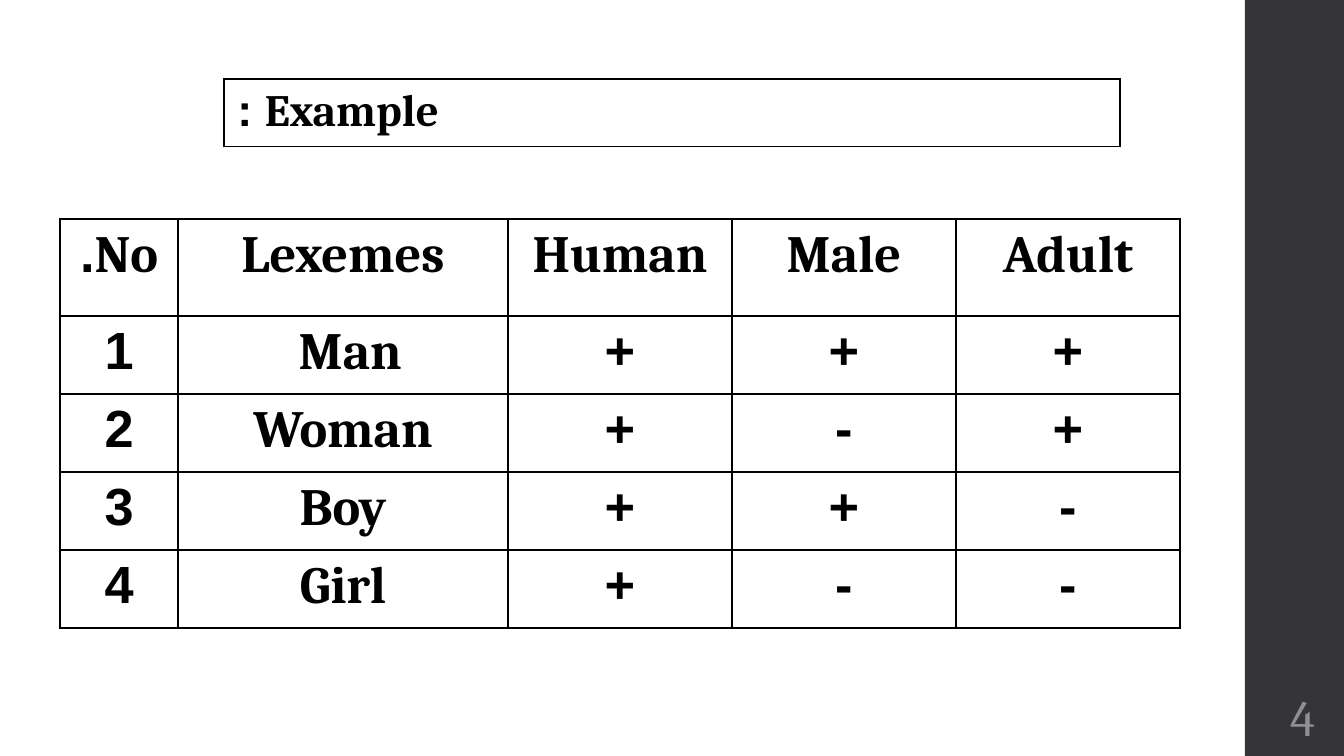
"""Builds a slide with a table of lexemes and their semantic features."""
from lxml import etree
from pptx import Presentation
from pptx import util as u
from pptx.dml.color import RGBColor
from pptx.enum import shapes, text
from pptx.oxml import ns

EMU_PER_PX = 914400 / 134.4
FONT = "Cambria"
BLACK = "000000"
FEATURES = [
    ["No.", "Lexemes", "Human", "Male", "Adult"],
    ["1", "Man ", "+", "+", "+"],
    ["2", "Woman", "+", "-", "+"],
    ["3", "Boy", "+", "+", "-"],
    ["4", "Girl", "+", "-", "-"],
]


def px(length):
    """Turn a length in px into EMU."""
    return u.Emu(round(length * EMU_PER_PX))


def color(code):
    """Turn a hex string into a colour."""
    return RGBColor.from_string(code)


def write(frame, words, *, size, ink=BLACK, bold=False, align=None, rtl=False):
    """Write one formatted paragraph into a text frame."""
    para = frame.paragraphs[0]
    para.alignment = align
    span = para.add_run()
    span.text = words
    span.font.name = FONT
    span.font.size = u.Pt(size)
    span.font.bold = bold
    span.font.color.rgb = color(ink)
    if rtl:
        para._p.get_or_add_pPr().set("rtl", "1")
        script = etree.SubElement(span._r.get_or_add_rPr(), ns.qn("a:cs"))
        script.set("typeface", "Arial")


def add_borders(cell, ink=BLACK, width=0.75):
    """Draw a solid line on every side of a cell."""
    properties = cell._tc.get_or_add_tcPr()
    for place, side in enumerate(("lnL", "lnR", "lnT", "lnB")):
        line = etree.Element(ns.qn(f"a:{side}"), w=str(u.Pt(width)))
        fill = etree.SubElement(line, ns.qn("a:solidFill"))
        etree.SubElement(fill, ns.qn("a:srgbClr"), val=ink)
        properties.insert(place, line)


def add_grid(page, left, top, widths, heights, rows, **style):
    """Add a plain bordered table of right-to-left text."""
    frame = page.shapes.add_table(
        len(heights), len(widths), px(left), px(top), px(sum(widths)), px(sum(heights))
    )
    table = frame.table
    table.first_row = False
    table.horz_banding = False
    for column, width in zip(table.columns, widths):
        column.width = px(width)
    for row, height, entries in zip(table.rows, heights, rows):
        row.height = px(height)
        for cell, words in zip(row.cells, entries):
            cell.fill.background()
            add_borders(cell)
            write(cell.text_frame, words, bold=True, rtl=True, **style)


def add_band(page, left, top, width, height, fill):
    """Add a plain filled rectangle."""
    band = page.shapes.add_shape(
        shapes.MSO_SHAPE.RECTANGLE, px(left), px(top), px(width), px(height)
    )
    band.shadow.inherit = False
    band.fill.solid()
    band.fill.fore_color.rgb = color(fill)
    band.line.fill.background()


def add_label(page, left, top, width, height, words, **style):
    """Add a text box without margins, centred vertically."""
    box = page.shapes.add_textbox(px(left), px(top), px(width), px(height))
    frame = box.text_frame
    frame.word_wrap = True
    frame.vertical_anchor = text.MSO_ANCHOR.MIDDLE
    frame.margin_left = frame.margin_right = 0
    frame.margin_top = frame.margin_bottom = 0
    write(frame, words, **style)


def main():
    """Build and save the deck."""
    deck = Presentation()
    deck.slide_width, deck.slide_height = px(1344), px(756)
    page = deck.slides.add_slide(deck.slide_layouts[6])
    add_band(page, 1245, 0, 99, 756, "353537")
    add_label(page, 1235, 687, 80, 58, "4", size=27, ink="8E8E94",
              align=text.PP_ALIGN.RIGHT)
    add_grid(page, 60, 219, [118, 330, 224, 224, 224], [97] + [78] * 4, FEATURES,
             size=28, align=text.PP_ALIGN.CENTER)
    add_grid(page, 224, 79, [896], [65], [["Example :"]],
             size=24, align=text.PP_ALIGN.LEFT)
    deck.save("out.pptx")


if __name__ == "__main__":
    main()
